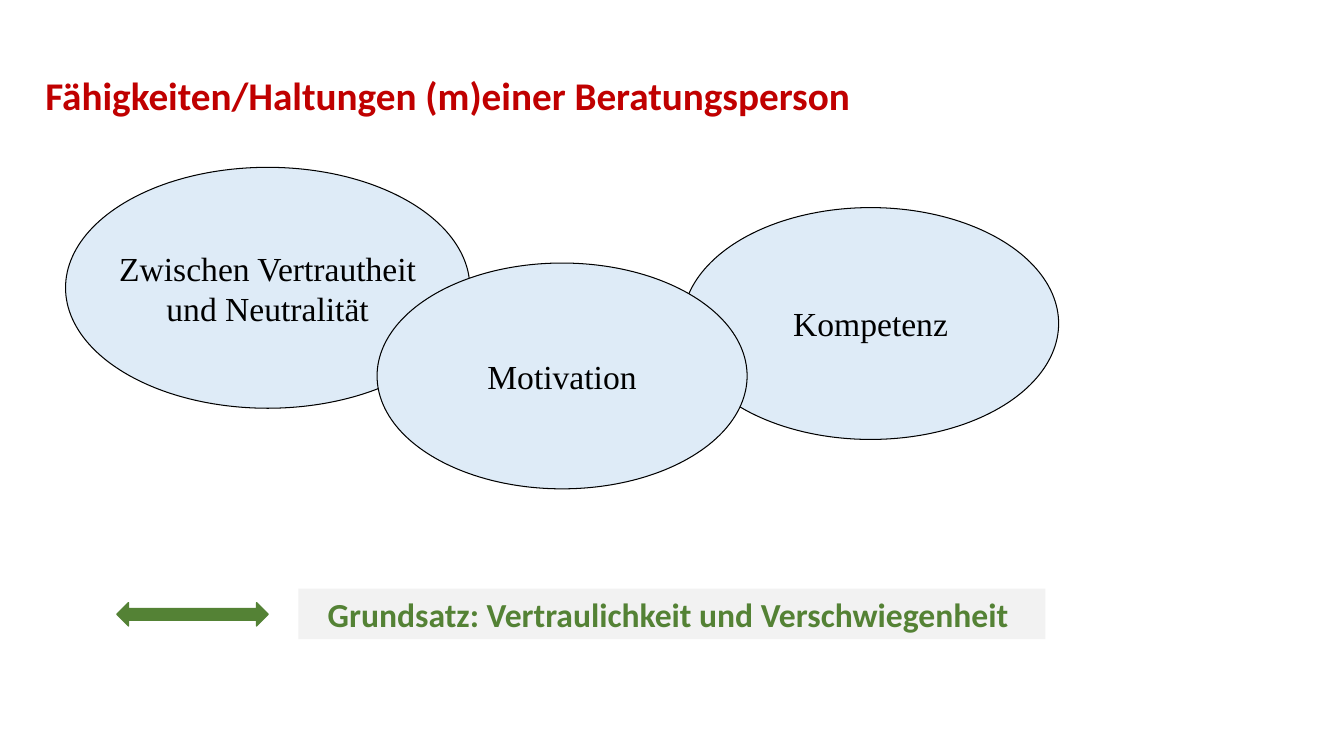
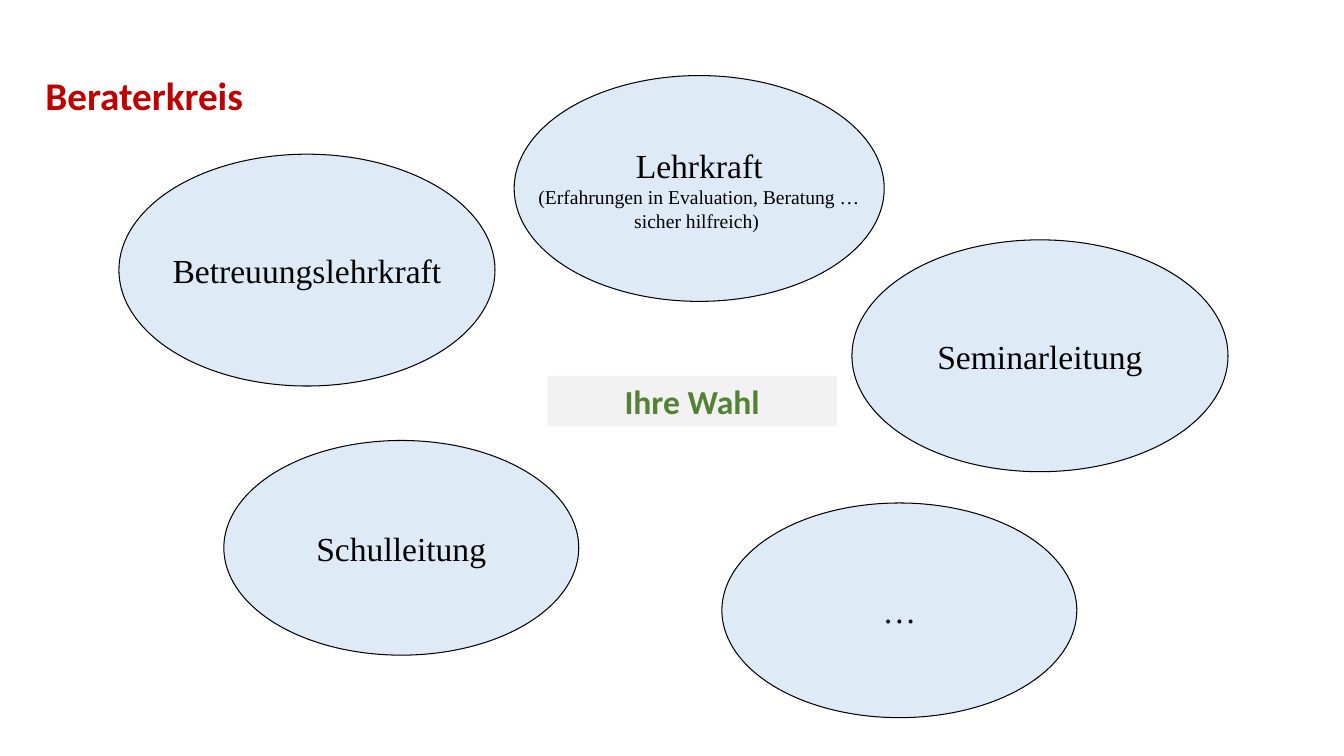
import pptx
import pptx.util
import pptx.dml.color
import pptx.enum.shapes
import pptx.enum.text

Inches = pptx.util.Inches
Pt = pptx.util.Pt
SHAPE = pptx.enum.shapes.MSO_SHAPE
ALIGN = pptx.enum.text.PP_ALIGN
ANCHOR = pptx.enum.text.MSO_ANCHOR
AUTO_SIZE = pptx.enum.text.MSO_AUTO_SIZE

RED = "C00000"
GREEN = "548235"
PALE_BLUE = "DEEBF7"
PALE_GREY = "F2F2F2"
BLACK = "000000"
HEAD_FONT = "Calibri"
BUBBLE_FONT = "Times New Roman"

TITLE_BOX = (0.35, 0.66, 12.63, 0.57)
LARGE = (4.01, 2.39)
WIDE = (3.73, 2.3)
MEDIUM = (3.67, 2.24)
SMALL = (3.52, 2.13)


def color(value):
    return pptx.dml.color.RGBColor.from_string(value)


def add_run(paragraph, text, size, font, text_color, bold=False):
    run = paragraph.add_run()
    run.text = text
    run.font.size = Pt(size)
    run.font.name = font
    run.font.bold = bold
    run.font.color.rgb = color(text_color)


def add_figure(slide, preset, box, fill, line=None, line_width=1):
    figure = slide.shapes.add_shape(preset, *map(Inches, box))
    figure.shadow.inherit = False
    figure.fill.solid()
    figure.fill.fore_color.rgb = color(fill)
    if line:
        figure.line.color.rgb = color(line)
        figure.line.width = Pt(line_width)
    else:
        figure.line.fill.background()
    return figure


def add_titled_slide(deck, heading):
    slide = deck.slides.add_slide(deck.slide_layouts[5])
    title = slide.shapes.title
    title.left, title.top, title.width, title.height = map(Inches, TITLE_BOX)
    frame = title.text_frame
    frame.word_wrap = True
    frame.auto_size = AUTO_SIZE.NONE
    frame.vertical_anchor = ANCHOR.TOP
    paragraph = frame.paragraphs[0]
    paragraph.alignment = ALIGN.LEFT
    add_run(paragraph, heading, 28, HEAD_FONT, RED, bold=True)
    return slide


def add_bubble(slide, position, size, *paragraphs):
    bubble = add_figure(slide, SHAPE.OVAL, position + size, PALE_BLUE, BLACK, 0.75)
    frame = bubble.text_frame
    frame.word_wrap = False
    frame.vertical_anchor = ANCHOR.MIDDLE
    for index, lines in enumerate(paragraphs):
        paragraph = frame.add_paragraph() if index else frame.paragraphs[0]
        paragraph.alignment = ALIGN.CENTER
        for number, (text, points) in enumerate(lines):
            if number:
                paragraph.add_line_break()
            add_run(paragraph, text, points, BUBBLE_FONT, BLACK)


def add_key_message(slide, box, message):
    band = add_figure(slide, SHAPE.RECTANGLE, box, PALE_GREY)
    frame = band.text_frame
    frame.word_wrap = True
    frame.auto_size = AUTO_SIZE.SHAPE_TO_FIT_TEXT
    frame.vertical_anchor = ANCHOR.TOP
    paragraph = frame.paragraphs[0]
    paragraph.alignment = ALIGN.CENTER
    add_run(paragraph, message, 24, HEAD_FONT, GREEN, bold=True)


def build_skills_slide(deck):
    slide = add_titled_slide(deck, "Fähigkeiten/Haltungen (m)einer Beratungsperson")
    add_key_message(slide, (2.96, 5.84, 7.41, 0.5),
                    "Grundsatz: Vertraulichkeit und Verschwiegenheit ")
    add_figure(slide, SHAPE.LEFT_RIGHT_ARROW, (1.16, 5.98, 1.5, 0.23), GREEN, GREEN)
    add_bubble(slide, (0.65, 1.66), LARGE,
               [("Zwischen Vertrautheit", 24)], [("und Neutralität", 24)])
    add_bubble(slide, (6.77, 2.06), WIDE, [("Kompetenz", 24)])
    add_bubble(slide, (3.74, 2.61), MEDIUM, [("Motivation", 24)])


def build_advisers_slide(deck):
    slide = add_titled_slide(deck, "Beraterkreis")
    add_bubble(slide, (2.22, 4.37), SMALL, [("Schulleitung", 24)])
    add_bubble(slide, (1.18, 1.53), WIDE, [("Betreuungslehrkraft", 24)])
    add_bubble(slide, (5.1, 0.75), MEDIUM,
               [("Lehrkraft", 24),
                ("(Erfahrungen in Evaluation, Beratung …", 14),
                ("sicher hilfreich) ", 14)])
    add_bubble(slide, (8.45, 2.38), WIDE, [("Seminarleitung", 24)])
    add_bubble(slide, (7.16, 4.99), SMALL, [("…", 24)])
    add_key_message(slide, (5.43, 3.73, 2.87, 0.5), "Ihre Wahl")


def main():
    deck = pptx.Presentation()
    deck.slide_width = Inches(13.33)
    deck.slide_height = Inches(7.5)
    build_skills_slide(deck)
    build_advisers_slide(deck)
    deck.save("out.pptx")


if __name__ == "__main__":
    main()
